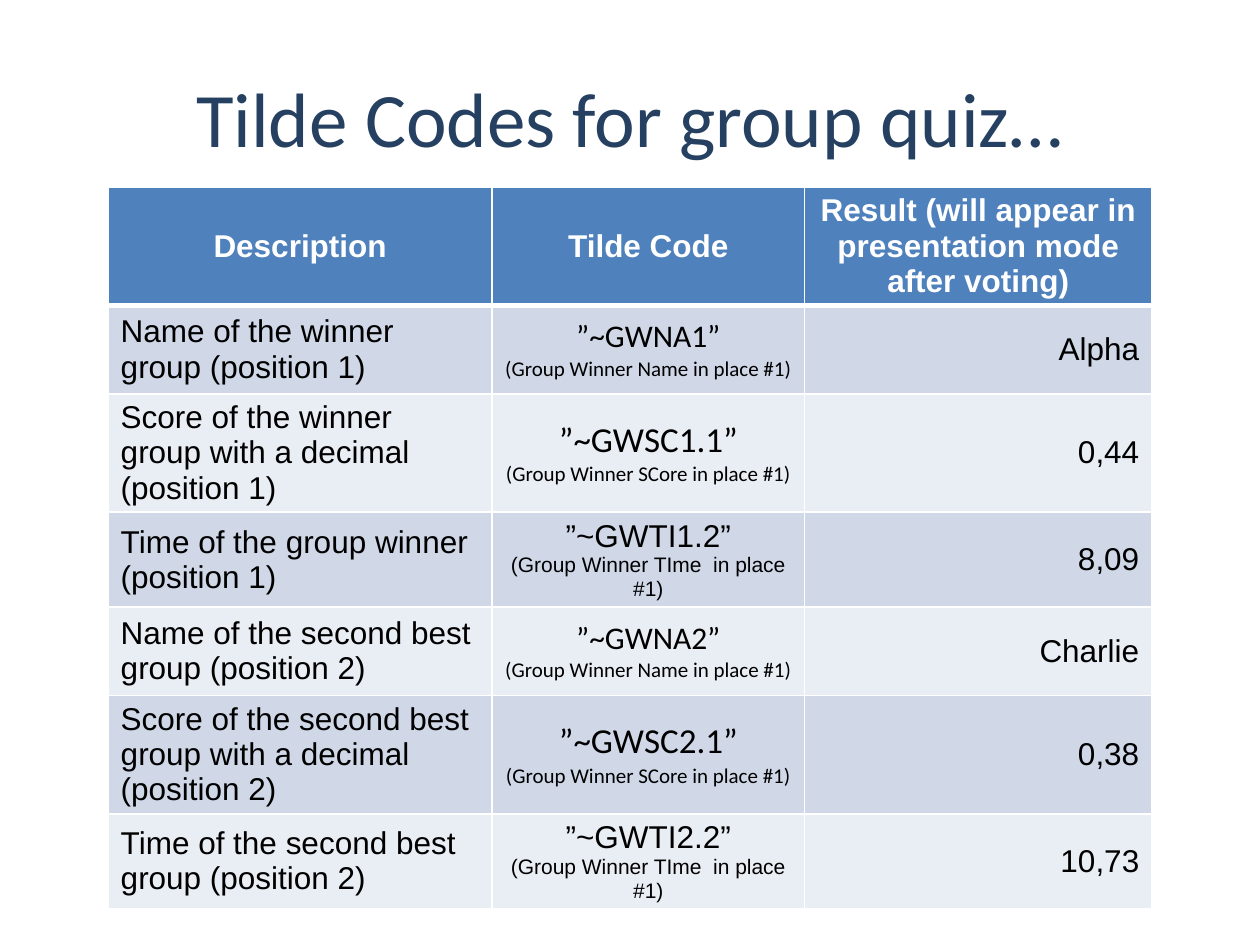
"""Build a slide with a table of tilde codes for a group quiz."""
from dataclasses import dataclass

from lxml import etree
from pptx import Presentation
from pptx import util as u
from pptx.dml import color
from pptx.enum import text
from pptx.oxml import ns

ALIGN = text.PP_ALIGN
MIDDLE = text.MSO_ANCHOR.MIDDLE
WHITE, BLACK, NAVY, BLUE = "FFFFFF", "000000", "254061", "4F81BD"
BANDS = ("D0D8E8", "E9EDF4")
HEADERS = ("Description", "Tilde Code",
           "Result (will appear in presentation mode after voting)")
COLUMN_WIDTHS = (7.74, 6.3, 7)
ROW_HEIGHT = 1.78


@dataclass
class CodeStyle:
    """Meaning and lettering shared by one kind of tilde code."""
    meaning: str
    font: str
    size: int


@dataclass
class Entry:
    """One body row of the table."""
    description: str
    code: str
    style: CodeStyle
    result: str


NAME = CodeStyle("(Group Winner Name in place #1)", "Calibri", 18)
SCORE = CodeStyle("(Group Winner SCore in place #1)", "Calibri", 20)
TIME = CodeStyle("(Group Winner TIme  in place #1)", "Arial", 18)

ENTRIES = (
    Entry("Name of the winner group (position 1)", "”~GWNA1”", NAME, "Alpha"),
    Entry("Score of the winner group with a decimal (position 1)",
          "”~GWSC1.1”", SCORE, "0,44"),
    Entry("Time of the group winner (position 1)", "”~GWTI1.2”", TIME, "8,09"),
    Entry("Name of the second best group (position 2)",
          "”~GWNA2”", NAME, "Charlie"),
    Entry("Score of the second best group with a decimal (position 2)",
          "”~GWSC2.1”", SCORE, "0,38"),
    Entry("Time of the second best group (position 2)",
          "”~GWTI2.2”", TIME, "10,73"),
)


def rgb(value: str) -> color.RGBColor:
    """Turn a hex string into a colour."""
    return color.RGBColor.from_string(value)


def write(p, words: str, size: int, font: str = "Arial", ink: str = BLACK,
          bold: bool = False, align=ALIGN.LEFT) -> None:
    """Add one formatted run to a paragraph."""
    p.alignment = align
    r = p.add_run()
    r.text = words
    r.font.size = u.Pt(size)
    r.font.name = font
    r.font.bold = bold
    r.font.color.rgb = rgb(ink)


def format_cell(cell, fill: str, top: int = 1, bottom: int = 1) -> None:
    """Give a cell its fill, anchor and white borders."""
    cell.vertical_anchor = MIDDLE
    cell.fill.solid()
    cell.fill.fore_color.rgb = rgb(fill)
    tc_pr = cell._tc.get_or_add_tcPr()
    widths = {"a:lnL": 1, "a:lnR": 1, "a:lnT": top, "a:lnB": bottom}
    for i, (tag, width) in enumerate(widths.items()):
        line = etree.Element(ns.qn(tag), w=str(u.Pt(width)))
        solid = etree.SubElement(line, ns.qn("a:solidFill"))
        etree.SubElement(solid, ns.qn("a:srgbClr"), val=WHITE)
        tc_pr.insert(i, line)


def fill_row(table, row: int, entry: Entry) -> None:
    """Write one entry into a body row."""
    cells = [table.cell(row, col) for col in range(len(HEADERS))]
    for cell in cells:
        format_cell(cell, BANDS[(row - 1) % 2], top=3 if row == 1 else 1)
    description, code, result = (cell.text_frame for cell in cells)
    style = entry.style
    write(description.paragraphs[0], entry.description, 18)
    write(code.paragraphs[0], entry.code, style.size, style.font,
          align=ALIGN.CENTER)
    write(code.add_paragraph(), style.meaning, 12, style.font,
          align=ALIGN.CENTER)
    write(result.paragraphs[0], entry.result, 18, align=ALIGN.RIGHT)


def add_code_table(s) -> None:
    """Add the table with its header and body rows."""
    rows = len(ENTRIES) + 1
    frame = s.shapes.add_table(rows, len(HEADERS), u.Cm(2.18), u.Cm(3.77),
                               u.Cm(sum(COLUMN_WIDTHS)),
                               u.Cm(rows * ROW_HEIGHT))
    table = frame.table
    for column, width in zip(table.columns, COLUMN_WIDTHS):
        column.width = u.Cm(width)
    for col, header in enumerate(HEADERS):
        cell = table.cell(0, col)
        format_cell(cell, BLUE, bottom=3)
        write(cell.text_frame.paragraphs[0], header, 18, ink=WHITE,
              bold=True, align=ALIGN.CENTER)
    for row, entry in enumerate(ENTRIES, start=1):
        fill_row(table, row, entry)
    frame.height = u.Cm(13.97)


def add_title(s) -> None:
    """Place and format the slide title."""
    sp = s.shapes.title
    sp.left, sp.top = u.Cm(1.27), u.Cm(0.76)
    sp.width, sp.height = u.Cm(22.86), u.Cm(3.18)
    tf = sp.text_frame
    tf.vertical_anchor = MIDDLE
    write(tf.paragraphs[0], "Tilde Codes for group quiz…", 44, "Calibri",
          NAVY, align=ALIGN.CENTER)


def main() -> None:
    """Build and save the presentation."""
    prs = Presentation()
    prs.slide_width, prs.slide_height = u.Cm(25.4), u.Cm(19.05)
    s = prs.slides.add_slide(prs.slide_layouts[5])
    add_title(s)
    add_code_table(s)
    prs.save("out.pptx")


if __name__ == "__main__":
    main()
